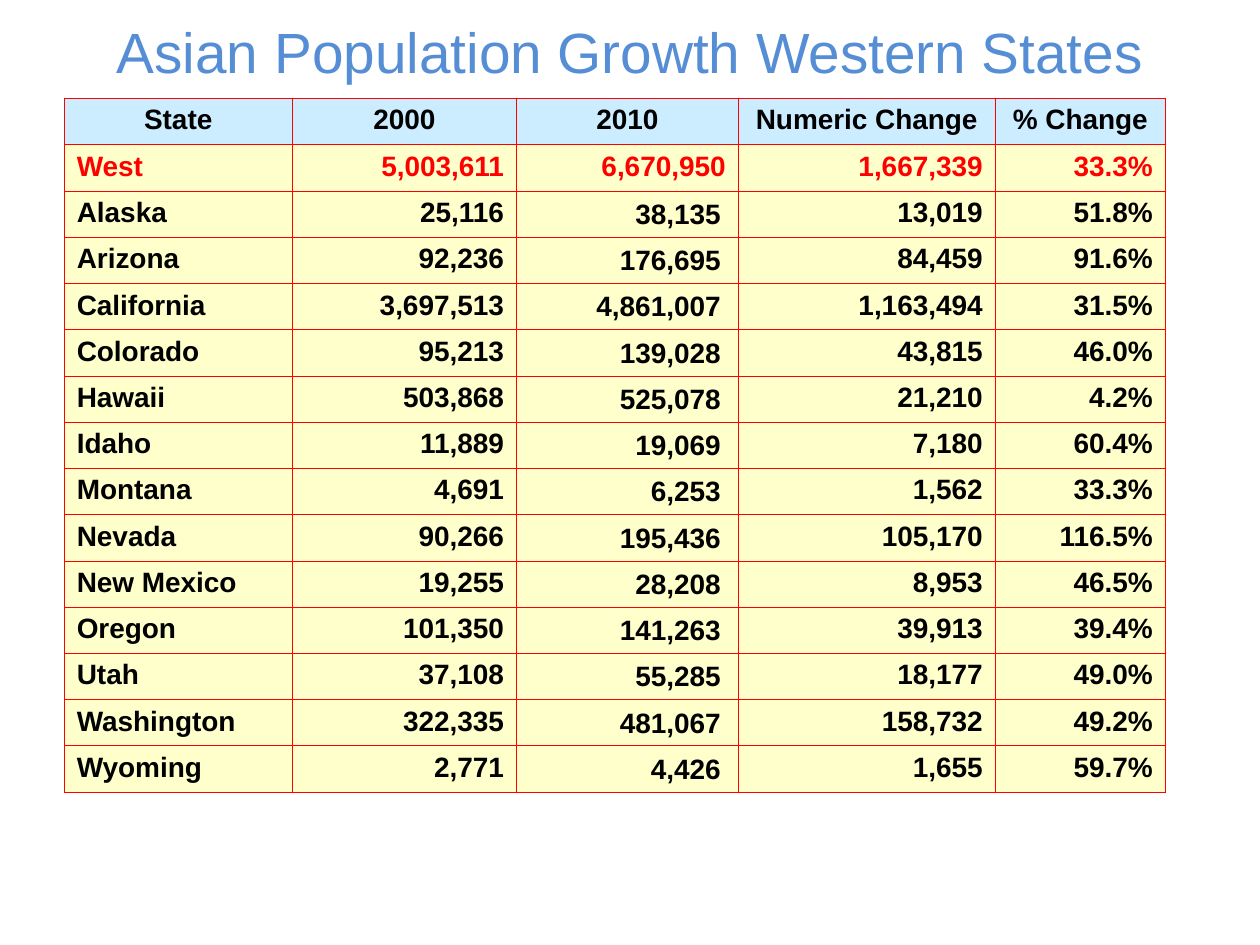
from lxml import etree
from pptx import Presentation
from pptx import util as u
from pptx.dml.color import RGBColor
from pptx.enum import text
from pptx.oxml.ns import qn

BLUE = RGBColor(0x55, 0x8E, 0xD5)
RED = RGBColor(0xFF, 0x00, 0x00)
BLACK = RGBColor(0x00, 0x00, 0x00)
SKY = RGBColor(0xCC, 0xEC, 0xFF)
CREAM = RGBColor(0xFF, 0xFF, 0xCC)

LEFT, CENTER, RIGHT = text.PP_ALIGN.LEFT, text.PP_ALIGN.CENTER, text.PP_ALIGN.RIGHT
MIDDLE = text.MSO_ANCHOR.MIDDLE

COL_WIDTHS = [1.81, 1.78, 1.76, 2.04, 1.35]
HEADER_HEIGHT, WASHINGTON_HEIGHT = 0.37, 0.34
YEAR_2010 = 2
ROWS = [
    ("State", "2000", "2010", "Numeric Change", "% Change"),
    ("West", "5,003,611", "6,670,950", "1,667,339", "33.3%"),
    ("Alaska", "25,116", "38,135", "13,019", "51.8%"),
    ("Arizona", "92,236", "176,695", "84,459", "91.6%"),
    ("California", "3,697,513", "4,861,007", "1,163,494", "31.5%"),
    ("Colorado", "95,213", "139,028", "43,815", "46.0%"),
    ("Hawaii", "503,868", "525,078", "21,210", "4.2%"),
    ("Idaho", "11,889", "19,069", "7,180", "60.4%"),
    ("Montana", "4,691", "6,253", "1,562", "33.3%"),
    ("Nevada", "90,266", "195,436", "105,170", "116.5%"),
    ("New Mexico", "19,255", "28,208", "8,953", "46.5%"),
    ("Oregon", "101,350", "141,263", "39,913", "39.4%"),
    ("Utah", "37,108", "55,285", "18,177", "49.0%"),
    ("Washington", "322,335", "481,067", "158,732", "49.2%"),
    ("Wyoming", "2,771", "4,426", "1,655", "59.7%"),
]


def write(tf, words, size=16, color=BLACK, bold=True, align=LEFT):
    """Put one formatted line into a text frame."""
    p = tf.paragraphs[0]
    p.alignment = align
    r = p.add_run()
    r.text = words
    r.font.name = "Arial"
    r.font.size = u.Pt(size)
    r.font.bold = bold
    r.font.color.rgb = color


def set_borders(cell, color=RED, width=0.5):
    """Draw the four sides of a cell."""
    tc_pr = cell._tc.get_or_add_tcPr()
    for side in ("lnL", "lnR", "lnT", "lnB"):
        ln = etree.SubElement(tc_pr, qn(f"a:{side}"), w=str(u.Pt(width)))
        fill = etree.SubElement(ln, qn("a:solidFill"))
        etree.SubElement(fill, qn("a:srgbClr"), val=str(color))


def add_title(s, left, top, width, height):
    """Place the slide title, centred in its box."""
    box = s.shapes.add_textbox(*map(u.Inches, (left, top, width, height)))
    tf = box.text_frame
    tf.word_wrap = True
    tf.vertical_anchor = MIDDLE
    write(tf, "Asian Population Growth Western States", size=32.4,
          color=BLUE, bold=False, align=CENTER)


def fill_cell(cell, words, row, col):
    """Style one cell by its place in the table and write its text."""
    set_borders(cell)
    cell.fill.solid()
    cell.fill.fore_color.rgb = SKY if row == 0 else CREAM
    if col == YEAR_2010 and row > 1:
        cell.vertical_anchor = MIDDLE
        cell.margin_top = u.Inches(0.01)
        cell.margin_bottom = 0
        cell.margin_right = u.Inches(0.14)
    align = CENTER if row == 0 else LEFT if col == 0 else RIGHT
    write(cell.text_frame, words, color=RED if row == 1 else BLACK, align=align)


def add_population_table(s, left, top, width, height):
    """Place the population table, sharing the height among the state rows."""
    frame = s.shapes.add_table(len(ROWS), len(COL_WIDTHS),
                               *map(u.Inches, (left, top, width, height)))
    table = frame.table
    for column, col_width in zip(table.columns, COL_WIDTHS):
        column.width = u.Inches(col_width)
    state_height = (height - HEADER_HEIGHT - WASHINGTON_HEIGHT) / (len(ROWS) - 2)
    special = {"State": HEADER_HEIGHT, "Washington": WASHINGTON_HEIGHT}
    for i, values in enumerate(ROWS):
        table.rows[i].height = u.Inches(special.get(values[0], state_height))
        for j, words in enumerate(values):
            fill_cell(table.cell(i, j), words, i, j)


def main():
    """Build the slide and save it."""
    prs = Presentation()
    prs.slide_width, prs.slide_height = u.Inches(10), u.Inches(7.5)
    s = prs.slides.add_slide(prs.slide_layouts[6])
    add_title(s, 0, 0.23, 10, 0.34)
    add_population_table(s, 0.51, 0.78, sum(COL_WIDTHS), 5.45)
    prs.save("out.pptx")


if __name__ == "__main__":
    main()
